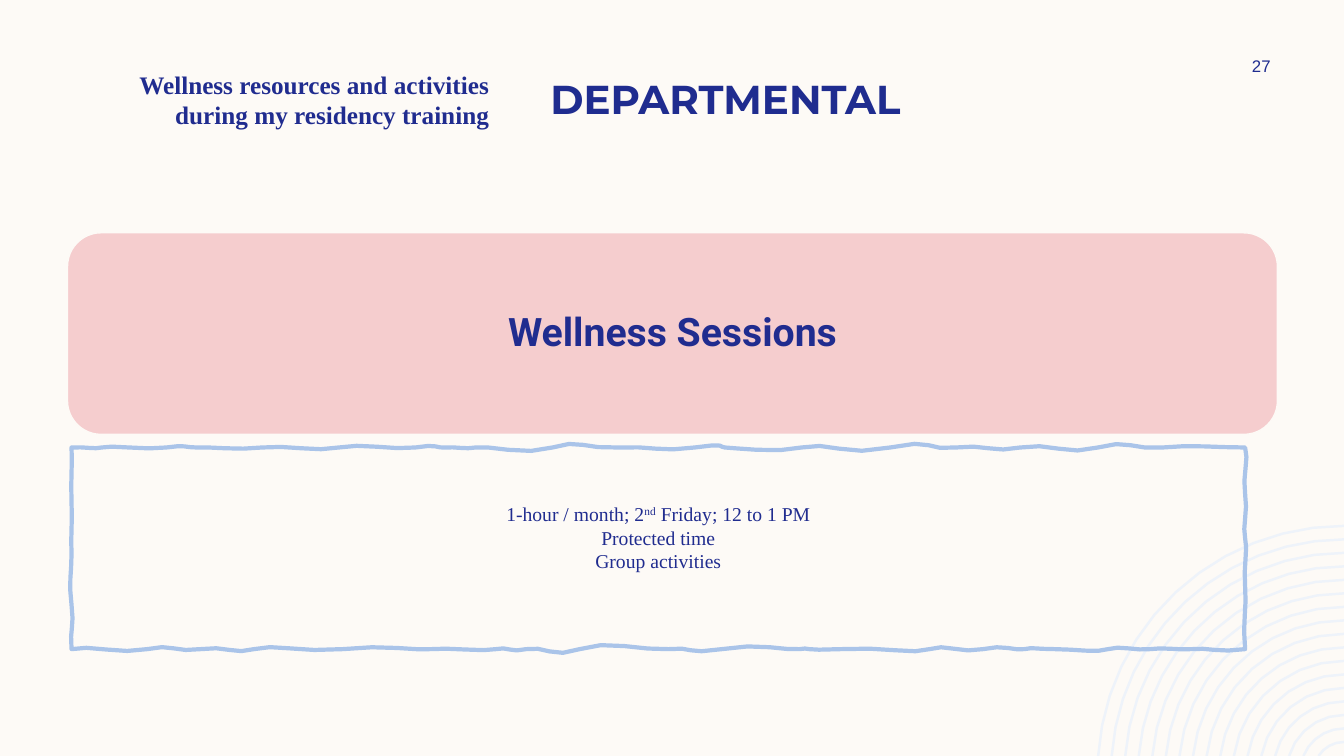
from math import asin, cos, pi, sin

from pptx import Presentation
from pptx.dml.color import RGBColor
from pptx.enum.shapes import MSO_SHAPE
from pptx.enum.text import MSO_ANCHOR, PP_ALIGN
from pptx.util import Pt

PX = 9144  # EMU per px, 100 px to the inch
COLORS = {
    "cream": "FDFAF6",
    "navy": "1F2C8F",
    "ink": "202C8F",
    "pink": "F5CDCE",
    "blue": "AAC4E9",
    "pale": "EEF3FA",
}


def color(name):
    return RGBColor.from_string(COLORS[name])


def write_text(shape, lines, *, font, size, ink="ink", bold=False, align=PP_ALIGN.CENTER,
               anchor=MSO_ANCHOR.MIDDLE, spacing=None, after=0, margins=(10, 5, 10, 5)):
    """Fill a shape with lines; a part between carets is superscript."""
    frame = shape.text_frame
    frame.word_wrap = True
    frame.vertical_anchor = anchor
    (frame.margin_left, frame.margin_top,
     frame.margin_right, frame.margin_bottom) = [margin * PX for margin in margins]
    for number, line in enumerate(lines):
        paragraph = frame.add_paragraph() if number else frame.paragraphs[0]
        paragraph.alignment = align
        paragraph.line_spacing = spacing
        paragraph.space_before, paragraph.space_after = Pt(0), Pt(after)
        for index, part in enumerate(line.split("^")):
            run = paragraph.add_run()
            run.text = part
            run.font.name, run.font.size, run.font.bold = font, Pt(size), bold
            run.font.color.rgb = color(ink)
            if index % 2:
                run.font._element.set("baseline", "30000")


presentation = Presentation()
presentation.slide_width, presentation.slide_height = 1333 * PX, 750 * PX
slide = presentation.slides.add_slide(presentation.slide_layouts[5])
slide.background.fill.solid()
slide.background.fill.fore_color.rgb = color("cream")
shapes = slide.shapes

# Concentric arcs in the lower right corner, ending at the slide edges
CENTER_X, CENTER_Y, BOTTOM = 1333, 766, 750
rings = None
for ring in range(17):
    radius = 244.3 - 13.4 * ring
    steps = 12 - ring // 2
    start = asin((CENTER_Y - BOTTOM) / radius)
    angles = [start + (pi / 2 - start) * step / steps for step in range(steps + 1)]
    arc = [((CENTER_X - radius * cos(angle)) * PX, (CENTER_Y - radius * sin(angle)) * PX)
           for angle in angles]
    if rings is None:
        rings = shapes.build_freeform(*arc[0], scale=1.0)
    else:
        rings.move_to(*arc[0])
    rings.add_line_segments(arc[1:], close=False)
arcs = rings.convert_to_shape()
arcs.shadow.inherit = False
arcs.fill.background()
arcs.line.color.rgb = color("pale")
arcs.line.width = Pt(1.75)

# Page number and heading
page_number = shapes.add_textbox(1197 * PX, 50 * PX, 108 * PX, 30 * PX)
write_text(page_number, ["27"], font="Arial", size=12, ink="navy", after=6)
heading = shapes.add_textbox(38 * PX, 64 * PX, 457 * PX, 71 * PX)
write_text(heading, ["Wellness resources and activities", "during my residency training"],
           font="Times New Roman", size=18, bold=True, align=PP_ALIGN.RIGHT,
           anchor=MSO_ANCHOR.TOP)

# Title
title = shapes.title
title.left, title.top, title.width, title.height = 495 * PX, 63 * PX, 449 * PX, 64 * PX
write_text(title, ["DEPARTMENTAL"], font="Montserrat", size=28.8, ink="navy", bold=True,
           anchor=MSO_ANCHOR.BOTTOM, spacing=Pt(48.8))

# Pink card
card = shapes.add_shape(MSO_SHAPE.ROUNDED_RECTANGLE, 67 * PX, 231 * PX, 1200 * PX, 200 * PX)
card.shadow.inherit = False
card.fill.solid()
card.fill.fore_color.rgb = color("pink")
card.line.color.rgb = color("cream")
card.line.width = Pt(1)
write_text(card, ["Wellness Sessions"], font="Roboto", size=28, bold=True, spacing=0.9)

# Hand-drawn frame: each wave gives two control points (place along the side,
# distance from the side) and the place where it meets the side again
LEFT, TOP, RIGHT, LOW = 71, 444, 1235, 644
WAVE_STEPS = 4
TOP_WAVES = [
    (84, -1, 94, 2, 101), (107, -3, 146, 3, 165), (185, -3, 183, 0, 195),
    (207, -1, 236, 3, 260), (283, -3, 315, 5, 336), (357, -5, 391, 3, 412),
    (434, -4, 433, 1, 442), (451, -1, 462, 2, 472), (481, -3, 523, 9, 548),
    (573, -9, 582, 2, 613), (644, -2, 656, 5, 689), (722, -5, 713, 0, 719),
    (725, 0, 772, 6, 795), (819, -7, 841, 10, 883), (925, -10, 921, 4, 948),
    (974, -4, 987, 6, 1012), (1038, -6, 1061, 9, 1089), (1117, -9, 1126, 3, 1153),
    (1181, -3, 1207, 0, 1235),
]
RIGHT_WAVES = [
    (455, 4, 473, -3, 490), (507, 3, 523, -3, 534), (544, 3, 563, -2, 582),
    (601, 2, 619, -3, 644),
]
LOW_WAVES = [
    (1210, 4, 1197, -2, 1182), (1167, 1, 1153, -2, 1141), (1128, 2, 1110, -4, 1099),
    (1089, 4, 1067, 0, 1046), (1025, 0, 1026, -2, 1016), (1007, 2, 995, -5, 975),
    (955, 5, 936, -6, 922), (908, 6, 874, -3, 834), (794, 2, 804, -2, 793),
    (781, 2, 752, -7, 716), (680, 6, 687, -3, 663), (639, 2, 600, -10, 575),
    (550, 10, 538, -4, 522), (507, 4, 503, -3, 492), (482, 3, 441, -2, 428),
    (415, 2, 380, -5, 340), (300, 4, 270, -6, 252), (234, 6, 222, -4, 199),
    (176, 4, 169, -6, 146), (122, 6, 86, -5, 71),
]
LEFT_WAVES = [
    (624, -2, 622, 3, 600), (578, -3, 569, 0, 550), (530, -1, 521, 1, 498),
    (475, -1, 462, 1, 444),
]
frame_points = []
for begin, side, upright, waves in (
    (LEFT, TOP, False, TOP_WAVES), (TOP, RIGHT, True, RIGHT_WAVES),
    (RIGHT, LOW, False, LOW_WAVES), (LOW, LEFT, True, LEFT_WAVES),
):
    for first, first_gap, second, second_gap, end in waves:
        for step in range(1, WAVE_STEPS + 1):
            t = step / WAVE_STEPS
            near, far = 3 * t * (1 - t) ** 2, 3 * t ** 2 * (1 - t)
            along = begin * (1 - t) ** 3 + first * near + second * far + end * t ** 3
            across = side + first_gap * near + second_gap * far
            x, y = (across, along) if upright else (along, across)
            frame_points.append((x * PX, y * PX))
        begin = end
builder = shapes.build_freeform(LEFT * PX, TOP * PX, scale=1.0)
builder.add_line_segments(frame_points, close=True)
details = builder.convert_to_shape()
details.shadow.inherit = False
details.fill.background()
details.line.color.rgb = color("blue")
details.line.width = Pt(3)
write_text(details, ["1-hour / month; 2^nd^ Friday; 12 to 1 PM", "Protected time", "Group activities"],
           font="Times New Roman", size=14, margins=(10, 5, 10, 27))

presentation.save("out.pptx")
